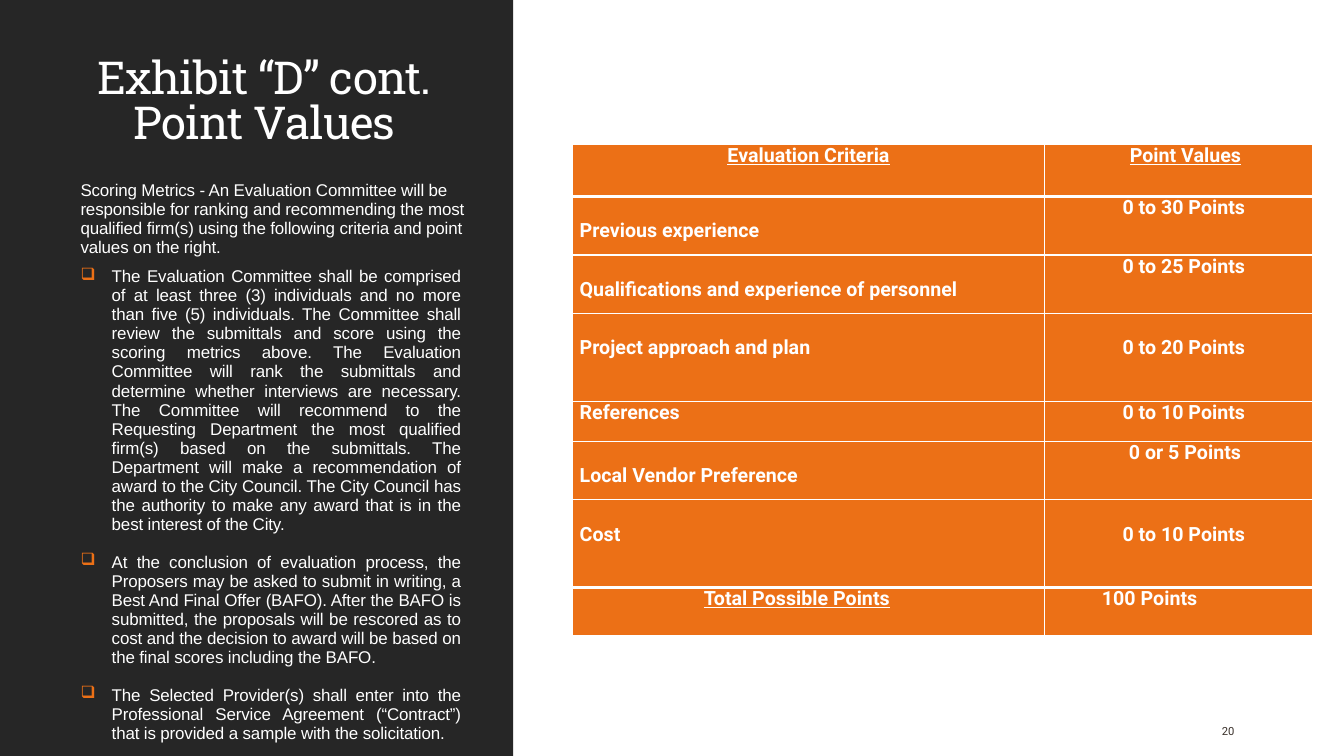
from lxml.etree import SubElement
from pptx import Presentation
from pptx.dml.color import RGBColor
from pptx.enum.shapes import MSO_SHAPE
from pptx.enum.text import MSO_ANCHOR, PP_ALIGN
from pptx.oxml.ns import qn
from pptx.util import Inches, Pt

COLORS = {"panel": "262626", "accent": "EC7016", "light": "FFFFFF", "number": "39302A"}
TITLE = "Exhibit “D” cont.\vPoint Values"
INTRO = (
    "Scoring Metrics - An Evaluation Committee will be responsible for ranking and "
    "recommending the most qualified firm(s) using the following criteria and point "
    "values on the right."
)
RULES = [
    "The Evaluation Committee shall be comprised of at least three (3) individuals and no "
    "more than five (5) individuals. The Committee shall review the submittals and score "
    "using the scoring metrics above. The Evaluation Committee will rank the submittals and "
    "determine whether interviews are necessary. The Committee will recommend to the "
    "Requesting Department the most qualified firm(s) based on the submittals. The "
    "Department will make a recommendation of award to the City Council. The City Council "
    "has the authority to make any award that is in the best interest of the City.",
    "At the conclusion of evaluation process, the Proposers may be asked to submit in "
    "writing, a Best And Final Offer (BAFO). After the BAFO is submitted, the proposals "
    "will be rescored as to cost and the decision to award will be based on the final "
    "scores including the BAFO.",
    "The Selected Provider(s) shall enter into the Professional Service Agreement "
    "(“Contract”) that is provided a sample with the solicitation.",
]
PAGE_NUMBER = "20"
COLUMN_WIDTHS = [4.68, 2.66]
LINE = 0.23
LEFT, CENTER, RIGHT = PP_ALIGN.LEFT, PP_ALIGN.CENTER, PP_ALIGN.RIGHT
HEADER = ("Evaluation Criteria", "Point Values", 0.52)
CRITERIA = [
    ("Previous experience", "0 to 30 Points", 0.58, LINE, 0, 0.67),
    ("Qualifications and experience of personnel", "0 to 25 Points", 0.58, LINE, 0, 0.67),
    ("Project approach and plan", "0 to 20 Points", 0.87, LINE, LINE, 0.67),
    ("References", "0 to 10 Points", 0.4, 0, 0, 0.67),
    ("Local Vendor Preference", "0 or 5 Points", 0.58, LINE, 0, 0.71),
    ("Cost", "0 to 10 Points", 0.87, LINE, LINE, 0.67),
]
TOTAL = ("Total Possible Points", "100 Points", 0.48)


def color(name):
    return RGBColor.from_string(COLORS[name])


def style(para, font, size, shade, spacing=0):
    for span in para.runs:
        span.font.name = font
        span.font.size = Pt(size)
        span.font.color.rgb = color(shade)
        if spacing:
            span.font._element.set("spc", str(spacing))


def add_box(page, left, top, width, height, anchor):
    box = page.shapes.add_textbox(Inches(left), Inches(top), Inches(width), Inches(height))
    box.text_frame.word_wrap = True
    box.text_frame.vertical_anchor = anchor
    return box.text_frame


def add_bullet(para):
    properties = para._p.get_or_add_pPr()
    for key, inches in (("marL", 0.31), ("indent", -0.31), ("marR", 0.14)):
        properties.set(key, str(Inches(inches)))
    bullet_color = SubElement(properties, qn("a:buClr"))
    SubElement(bullet_color, qn("a:srgbClr"), val=COLORS["accent"])
    SubElement(properties, qn("a:buChar"), char="❑")


def add_borders(cell, top, bottom):
    properties = cell._tc.get_or_add_tcPr()
    for side, points in (("lnL", 1), ("lnR", 1), ("lnT", top), ("lnB", bottom)):
        line = SubElement(properties, qn(f"a:{side}"), w=str(Pt(points)))
        fill = SubElement(line, qn("a:solidFill"))
        SubElement(fill, qn("a:srgbClr"), val=COLORS["light"])


def fill_cell(cell, text, align, margins, underline, borders):
    add_borders(cell, *borders)
    cell.fill.solid()
    cell.fill.fore_color.rgb = color("accent")
    left, top, right = margins
    cell.margin_left, cell.margin_top = Inches(left), Inches(top)
    cell.margin_right, cell.margin_bottom = Inches(right), 0
    cell.text_frame.text = text
    para = cell.text_frame.paragraphs[0]
    para.alignment = align
    style(para, "Roboto", 14, "light")
    for span in para.runs:
        span.font.bold = True
        span.font.underline = underline


def add_panel(page, height):
    panel = page.shapes.add_shape(MSO_SHAPE.RECTANGLE, 0, 0, Inches(5.09), height)
    panel.shadow.inherit = False
    panel.fill.solid()
    panel.fill.fore_color.rgb = color("panel")
    panel.line.fill.background()


def add_title(page):
    frame = add_box(page, 0.7, 0.18, 3.85, 1.34, MSO_ANCHOR.BOTTOM)
    frame.text = TITLE
    para = frame.paragraphs[0]
    para.alignment = CENTER
    para.line_spacing = 0.82
    style(para, "Roboto Slab", 32.4, "light", -50)


def add_rules(page):
    frame = add_box(page, 0.7, 1.75, 4.11, 5.58, MSO_ANCHOR.TOP)
    frame.text = "\n".join([INTRO] + RULES)
    for index, para in enumerate(frame.paragraphs):
        para.line_spacing = 0.94
        if index:
            para.alignment = PP_ALIGN.JUSTIFY
            para.space_before = Pt(6.8 if index == 1 else 13.2)
            add_bullet(para)
        style(para, "Arial", 12.1, "light", -10)


def add_criteria(page):
    heights = [row[2] for row in [HEADER, *CRITERIA, TOTAL]]
    frame = page.shapes.add_table(
        len(heights), 2, Inches(5.68), Inches(1.43),
        Inches(sum(COLUMN_WIDTHS)), Inches(sum(heights)),
    )
    table = frame.table
    for column, width in zip(table.columns, COLUMN_WIDTHS):
        column.width = Inches(width)
    for row, height in zip(table.rows, heights):
        row.height = Inches(height)
    last = len(heights) - 1
    fill_cell(table.cell(0, 0), HEADER[0], CENTER, (0, 0, 0), True, (1, 3))
    fill_cell(table.cell(0, 1), HEADER[1], RIGHT, (0, 0, 0.71), True, (1, 3))
    for index, (name, points, _, name_top, points_top, right) in enumerate(CRITERIA, 1):
        borders = (3 if index == 1 else 1, 3 if index == last - 1 else 1)
        fill_cell(table.cell(index, 0), name, LEFT, (0.07, name_top, 0), False, borders)
        fill_cell(table.cell(index, 1), points, RIGHT, (0, points_top, right), False, borders)
    fill_cell(table.cell(last, 0), TOTAL[0], LEFT, (1.3, 0, 0), True, (3, 1))
    fill_cell(table.cell(last, 1), TOTAL[1], LEFT, (0.57, 0, 0), False, (3, 1))


def add_page_number(page):
    frame = add_box(page, 12.02, 7.05, 0.85, 0.4, MSO_ANCHOR.MIDDLE)
    frame.text = PAGE_NUMBER
    style(frame.paragraphs[0], "Roboto", 8, "number")


def main():
    deck = Presentation()
    deck.slide_width, deck.slide_height = Inches(13.33), Inches(7.5)
    page = deck.slides.add_slide(deck.slide_layouts[6])
    add_panel(page, deck.slide_height)
    add_title(page)
    add_criteria(page)
    add_rules(page)
    add_page_number(page)
    deck.save("out.pptx")


if __name__ == "__main__":
    main()
